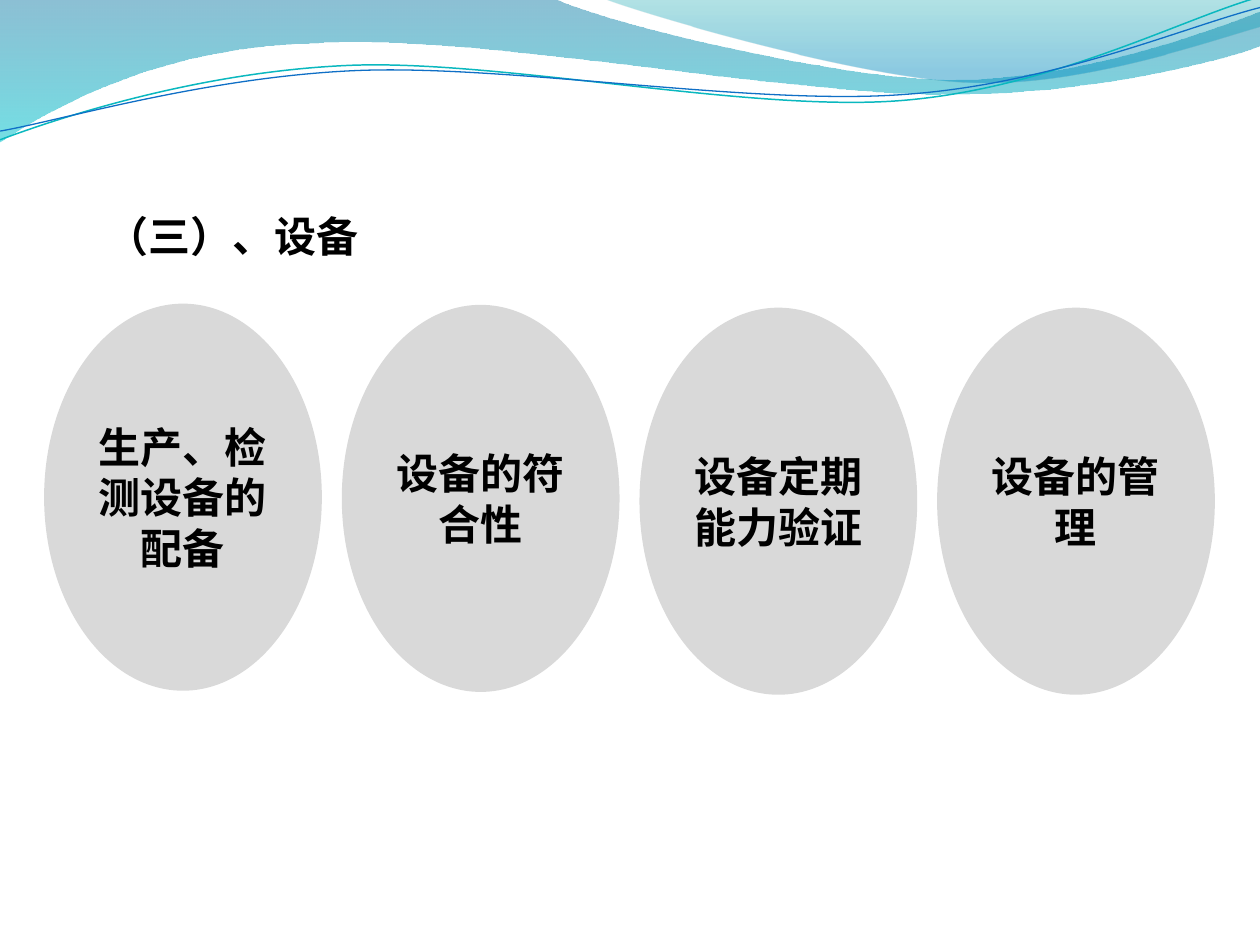
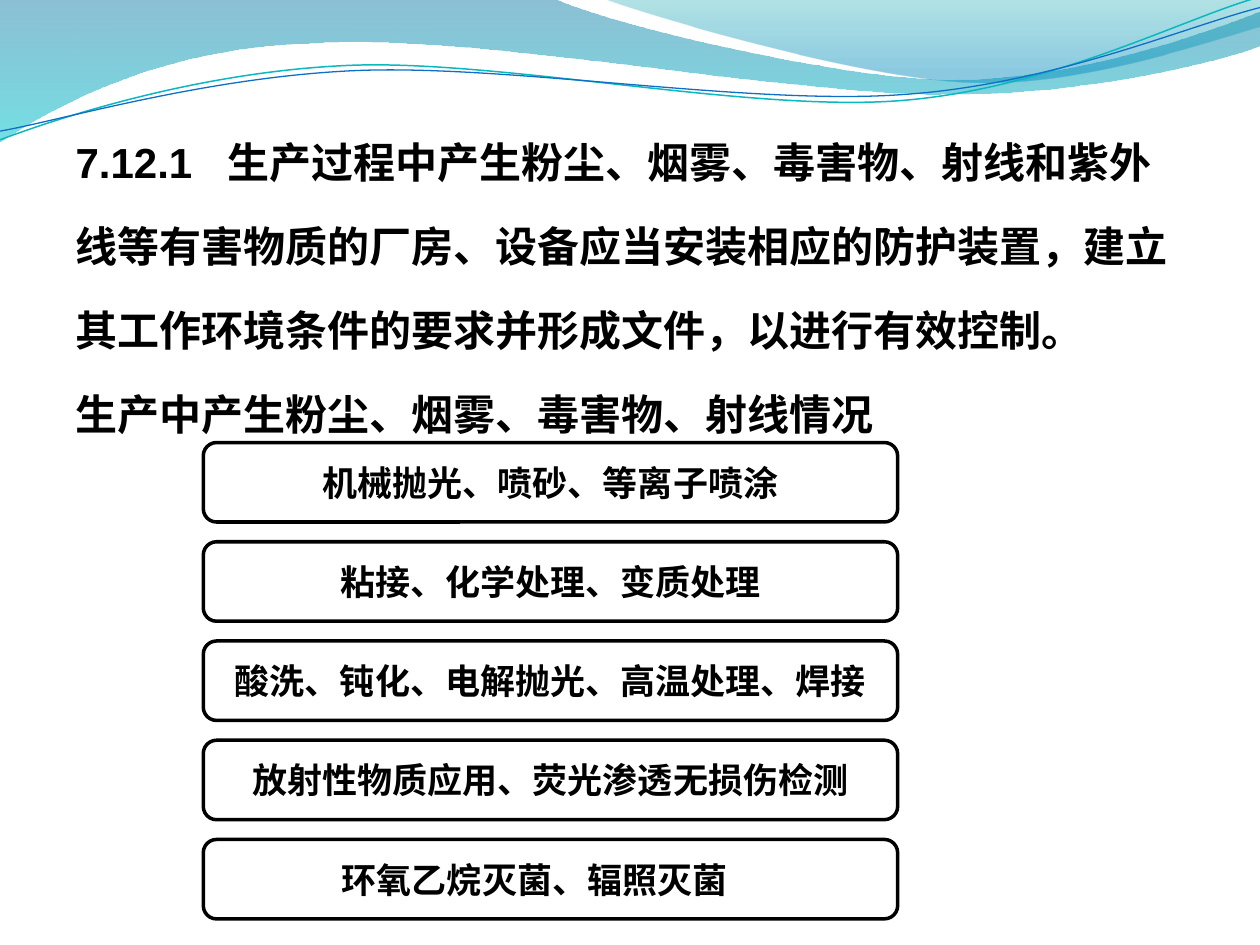
from pptx import Presentation
from pptx.dml.color import RGBColor
from pptx.enum import shapes, text
from pptx.oxml import ns
from pptx.util import Pt
from lxml import etree

BLACK, OVAL_GREY = "000000", "D9D9D9"
HEAD_FONT, BODY_FONT = "Cambria", "Arial"

BANDS = [
    {"start": (0, 0),
     "steps": [(316.8, -0.7),
               (342.7, 12.2, 478.1, 45.4, 545.8, 45.4),
               (614.2, 45.4, 689.8, 18.7, 720, 6.5),
               (720.7, 25.9),
               (707.8, 31.7, 626.4, 54.7, 537.1, 54),
               (447.8, 54, 275, 20.2, 185, 24.5),
               (92.9, 25.9, 33.1, 59.8, -0.7, 81.4),
               (0, 0)],
     "stops": [(0, "0074A1", 45), (1, "00C6CF", 55)]},
    {"start": (344.9, -0.7),
     "steps": [(366.5, 7.9, 491, 44.6, 553.7, 46.8),
               (616.3, 49.7, 691.9, 23, 720, 15.1),
               (720, 0),
               (344.9, -0.7)],
     "stops": [(0, "00A1A9", 30), (0.8, "008BBF", 45)]},
    {"start": (0, 79.9),
     "steps": [(34.6, 67, 113.8, 41, 199.4, 37.4),
               (284.4, 33.8, 427, 64.1, 513.4, 57.6),
               (599.8, 51.1, 675.4, 10.8, 718.6, -1.4)],
     "line": ("0AB8BF", 0.85)},
    {"start": (0, 74.9),
     "steps": [(33.8, 69.1, 118.1, 43.9, 203.8, 40.3),
               (290.2, 36.7, 429.8, 60.5, 516.2, 54),
               (601.9, 48.2, 677.5, 15.1, 720, 4.3)],
     "line": ("0F6FC6", 0.75)},
]

EQUIPMENT_TITLE = "（三）、设备"
EQUIPMENT_TOPICS = [
    ("生产、检测设备的配备", 173.5),
    ("设备的符合性", 174.2),
    ("设备定期能力验证", 175.8),
    ("设备的管理", 175.8),
]

CLAUSE_LINES = [
    (["7.12.1", " ", "生产过程中产生粉尘、烟雾、毒害物、射线和紫外"], BODY_FONT),
    (["线等有害物质的厂房、设备应当安装相应的防护装置，建立"], BODY_FONT),
    (["其工作环境条件的要求并形成文件，以进行有效控制。"], BODY_FONT),
    (["生产中产生粉尘、烟雾、毒害物、射线情况"], HEAD_FONT),
]
NUMBER_GAP = 13.3
HAZARD_PROCESSES = [
    ("机械抛光、喷砂、等离子喷涂", 0),
    ("粘接、化学处理、变质处理", 0),
    ("酸洗、钝化、电解抛光、高温处理、焊接", 0),
    ("放射性物质应用、荧光渗透无损伤检测", 0),
    ("环氧乙烷灭菌、辐照灭菌", 18),
]


def color(value):
    return RGBColor.from_string(value)


def place(sp, left, top, width, height):
    sp.left, sp.top, sp.width, sp.height = map(Pt, (left, top, width, height))


def style(p, size, font=HEAD_FONT, align=text.PP_ALIGN.LEFT):
    p.alignment = align
    p.font.size, p.font.bold, p.font.name = Pt(size), True, font
    p.font.color.rgb = color(BLACK)


def add_curve(slide, start, steps, closed):
    points = [(Pt(x), Pt(y)) for step in steps for x, y in zip(step[::2], step[1::2])]
    builder = slide.shapes.build_freeform(*map(Pt, start))
    builder.add_line_segments(points, close=closed)
    sp = builder.convert_to_shape()
    segments = iter(list(sp.element.spPr.iter(ns.qn("a:lnTo"))))
    for step in steps:
        first = next(segments)
        if len(step) == 6:
            first.tag = ns.qn("a:cubicBezTo")
            for _ in range(2):
                extra = next(segments)
                first.append(extra[0])
                extra.getparent().remove(extra)
    return sp


def add_master_bands(master, slide):
    tree = master.element.cSld.spTree
    for i, band in enumerate(BANDS):
        sp = add_curve(slide, band["start"], band["steps"], "stops" in band)
        sp.shadow.inherit = False
        if "stops" in band:
            sp.line.fill.background()
            sp.fill.gradient()
            sp.fill.gradient_angle = 270
            for stop, (position, value, _) in zip(sp.fill.gradient_stops, band["stops"]):
                stop.position = position
                stop.color.rgb = color(value)
            fills = sp.element.spPr.iter(ns.qn("a:srgbClr"))
            for fill, (_, _, opacity) in zip(fills, band["stops"]):
                etree.SubElement(fill, ns.qn("a:alpha"), val=str(opacity * 1000))
        else:
            value, width = band["line"]
            sp.fill.background()
            sp.line.color.rgb = color(value)
            sp.line.width = Pt(width)
        sp.element.nvSpPr.cNvPr.set("id", str(20 + i))
        tree.insert(2 + i, sp.element)


def add_label(slide, kind, label, box, size):
    sp = slide.shapes.add_shape(kind, *map(Pt, box))
    sp.shadow.inherit = False
    tf = sp.text_frame
    tf.word_wrap = True
    tf.vertical_anchor = text.MSO_ANCHOR.MIDDLE
    tf.text = label
    style(tf.paragraphs[0], size, align=text.PP_ALIGN.CENTER)
    return sp


def build_equipment(slide):
    title = slide.shapes.title
    place(title, 53.7, 116.6, 311.8, 36)
    tf = title.text_frame
    tf.text = EQUIPMENT_TITLE
    tf.auto_size = text.MSO_AUTO_SIZE.NONE
    tf.vertical_anchor = text.MSO_ANCHOR.TOP
    style(tf.paragraphs[0], 24)
    for i, (topic, top) in enumerate(EQUIPMENT_TOPICS):
        sp = add_label(slide, shapes.MSO_SHAPE.OVAL, topic,
                       (25.2 + i * 170.1, top, 158.7, 221.2), 24)
        sp.fill.solid()
        sp.fill.fore_color.rgb = color(OVAL_GREY)
        sp.line.fill.background()


def build_hazards(slide):
    title = slide.shapes.title
    title.element.getparent().remove(title.element)
    body = slide.placeholders[1]
    place(body, 36, 60.1, 648, 437.8)
    tf = body.text_frame
    tf.auto_size = text.MSO_AUTO_SIZE.NONE
    for i, (parts, font) in enumerate(CLAUSE_LINES):
        p = tf.add_paragraph() if i else tf.paragraphs[0]
        style(p, 24, font)
        p.line_spacing = 1.5
        props = p._p.get_or_add_pPr()
        props.set("marL", "0")
        props.set("indent", "0")
        props.find(ns.qn("a:defRPr")).addprevious(etree.Element(ns.qn("a:buNone")))
        for part in parts:
            r = p.add_run()
            r.text = part
            if part == " ":
                r.font._element.set("spc", str(round(NUMBER_GAP * 100)))
    for i, (process, right_inset) in enumerate(HAZARD_PROCESSES):
        sp = add_label(slide, shapes.MSO_SHAPE.ROUNDED_RECTANGLE, process,
                       (116.2, 252.9 + i * 56.7, 396.8, 45.4), 20)
        sp.fill.background()
        sp.line.color.rgb = color(BLACK)
        sp.line.width = Pt(2)
        tf = sp.text_frame
        tf.margin_left = tf.margin_top = tf.margin_bottom = 0
        tf.margin_right = Pt(right_inset)


def main():
    prs = Presentation()
    prs.slide_width, prs.slide_height = Pt(720), Pt(540)
    equipment = prs.slides.add_slide(prs.slide_layouts[5])
    hazards = prs.slides.add_slide(prs.slide_layouts[1])
    add_master_bands(prs.slide_master, equipment)
    build_equipment(equipment)
    build_hazards(hazards)
    prs.save("out.pptx")


if __name__ == "__main__":
    main()
